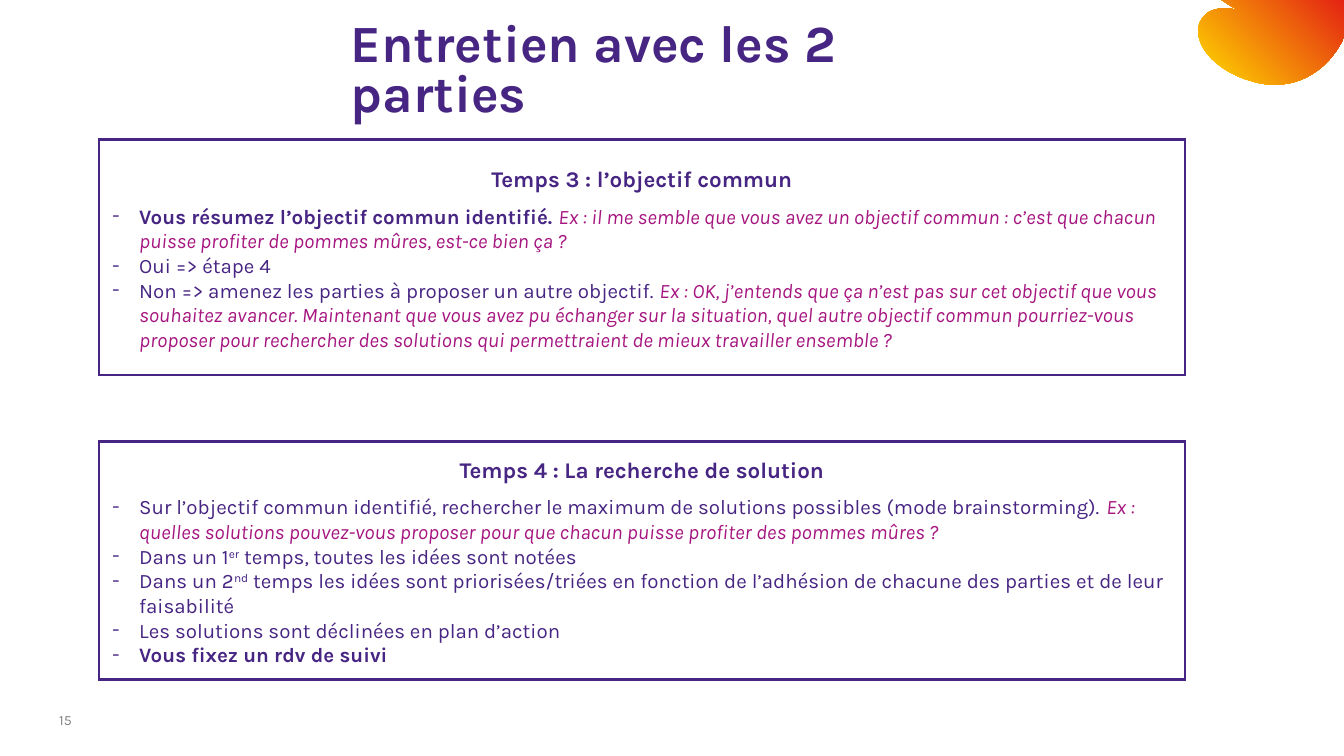
from dataclasses import dataclass
from typing import NamedTuple

from lxml import etree
from pptx import Presentation
from pptx import util as u
from pptx.dml.color import RGBColor
from pptx.enum import shapes, text
from pptx.oxml import ns

PURPLE = RGBColor(0x47, 0x25, 0x83)
PINK = RGBColor(0xA6, 0x16, 0x80)
GREY = RGBColor(0x80, 0x80, 0x80)
YELLOW = RGBColor(0xFF, 0xDD, 0x00)
RED = RGBColor(0xE4, 0x23, 0x12)

WIDE = u.Inches(10)
HIGH = WIDE * 9 // 16
CELL = WIDE / 100
LEFT, SPAN = 7.37, 80.8

FACE = "Karla"
BASE = {"name": FACE, "bold": False, "italic": False}
FORMS = {
    "title": {"size": u.Pt(28), "bold": True},
    "page": {"size": u.Pt(7.5)},
    "head": {"size": u.Pt(12), "bold": True},
    "body": {"size": u.Pt(11)},
    "bold": {"size": u.Pt(11), "bold": True},
    "quote": {"size": u.Pt(11), "italic": True},
    "super": {"size": u.Pt(11)},
}
INKS = {"quote": PINK, "page": GREY}
BARE = dict.fromkeys(
    ("margin_left", "margin_top", "margin_right", "margin_bottom"), 0
)


class Span(NamedTuple):
    words: str
    form: str = "body"


class Area(NamedTuple):
    left: float
    top: float
    width: float
    height: float

    def scale(self) -> list[int]:
        return [round(side * CELL) for side in self]


@dataclass(frozen=True)
class Panel:
    top: float
    height: float
    head: str
    items: list[list[Span]]


PANELS = [
    Panel(10.4, 17.5, "Temps 3 : l’objectif commun", [
        [
            Span("Vous résumez l’objectif commun identifié. ", "bold"),
            Span("Ex : il me semble que vous avez un objectif commun : "
                 "c’est que chacun puisse profiter de pommes mûres, "
                 "est-ce bien ça ?", "quote"),
        ],
        [Span("Oui => étape 4")],
        [
            Span("Non => amenez les parties à proposer un autre objectif. "),
            Span("Ex : OK, j’entends que ça n’est pas sur cet objectif que "
                 "vous souhaitez avancer. Maintenant que vous avez pu "
                 "échanger sur la situation, quel autre objectif commun "
                 "pourriez-vous proposer pour rechercher des solutions qui "
                 "permettraient de mieux travailler ensemble ?", "quote"),
        ],
    ]),
    Panel(32.85, 17.7, "Temps 4 : La recherche de solution", [
        [
            Span("Sur l’objectif commun identifié, rechercher le maximum de "
                 "solutions possibles (mode brainstorming). "),
            Span("Ex : quelles solutions pouvez-vous proposer pour que "
                 "chacun puisse profiter des pommes mûres ?", "quote"),
        ],
        [
            Span("Dans un 1"),
            Span("er", "super"),
            Span(" temps, toutes les idées sont notées"),
        ],
        [
            Span("Dans un 2"),
            Span("nd", "super"),
            Span(" temps les idées sont priorisées/triées en fonction de "
                 "l’adhésion de chacune des parties et de leur faisabilité"),
        ],
        [Span("Les solutions sont déclinées en plan d’action")],
        [Span("Vous fixez un rdv de suivi", "bold")],
    ]),
]

PETAL = [
    [(99.9, 3), (98.7, 5.4), (96.2, 6.9), (93.3, 6.1)],
    [(93.3, 6.1), (89.6, 5.1), (88.3, 2.3), (89.7, 1.1)],
    [(89.7, 1.1), (90.2, 0.6), (91.1, 0.5), (92.4, 0.8)],
    [(92.4, 0.8), (92.1, 0.7), (91.8, 0.6), (91.5, 0.4)],
]


def assign(target, values: dict) -> None:
    for key, value in values.items():
        setattr(target, key, value)


def write(para, spans: list[Span]) -> None:
    for span in spans:
        run = para.add_run()
        run.text = span.words
        assign(run.font, BASE | FORMS[span.form])
        run.font.color.rgb = INKS.get(span.form, PURPLE)
        if span.form == "super":
            run.font._element.set("baseline", "30000")


def dash(para) -> None:
    props = para._p.get_or_add_pPr()
    props.set("marL", str(u.Inches(0.2)))
    props.set("indent", str(-u.Inches(0.2)))
    etree.SubElement(props, ns.qn("a:buFont")).set("typeface", FACE)
    etree.SubElement(props, ns.qn("a:buChar")).set("char", "-")


def label(slide, area: Area, span: Span, anchor, gap: float) -> None:
    frame = slide.shapes.add_textbox(*area.scale()).text_frame
    assign(frame, BARE | {"word_wrap": True, "vertical_anchor": anchor})
    para = frame.paragraphs[0]
    para.line_spacing = gap
    write(para, [span])


def frame_panel(slide, panel: Panel) -> None:
    area = Area(LEFT, panel.top, SPAN, panel.height)
    box = slide.shapes.add_shape(shapes.MSO_SHAPE.RECTANGLE, *area.scale())
    box.shadow.inherit = False
    box.fill.background()
    box.line.color.rgb = PURPLE
    box.line.width = u.Pt(1.5)
    edge = box.line._get_or_add_ln()
    etree.SubElement(edge, ns.qn("a:miter")).set("lim", "800000")
    frame = box.text_frame
    assign(frame, {"word_wrap": True, "margin_top": u.Pt(4.8),
                   "vertical_anchor": text.MSO_ANCHOR.MIDDLE})
    head = frame.paragraphs[0]
    assign(head, {"alignment": text.PP_ALIGN.CENTER, "space_after": u.Pt(6)})
    write(head, [Span(panel.head, "head")])
    for item in panel.items:
        para = frame.add_paragraph()
        para.alignment = text.PP_ALIGN.LEFT
        dash(para)
        write(para, item)


def curve(knots: list[tuple], steps: int = 16) -> list[tuple]:
    points = []
    for step in range(steps + 1):
        t = step / steps
        s = 1 - t
        rates = (s**3, 3 * s * s * t, 3 * s * t * t, t**3)
        points.append(tuple(
            sum(rate * knot[axis] for rate, knot in zip(rates, knots))
            for axis in (0, 1)
        ))
    return points


def petal(slide) -> None:
    points = [(100, 0), (100, 2.6)]
    for knots in PETAL:
        points += curve(knots)
    pen = slide.shapes.build_freeform(round(90.9 * CELL), 0)
    pen.add_line_segments(
        [(round(x * CELL), round(y * CELL)) for x, y in points], close=True
    )
    shape = pen.convert_to_shape()
    shape.shadow.inherit = False
    shape.line.fill.background()
    shape.fill.gradient()
    shape.fill.gradient_angle = 45
    for stop, ink, place in zip(
        shape.fill.gradient_stops, (YELLOW, RED), (0, 1)
    ):
        stop.color.rgb = ink
        stop.position = place


def main() -> None:
    deck = Presentation()
    assign(deck, {"slide_width": WIDE, "slide_height": HIGH})
    slide = deck.slides.add_slide(deck.slide_layouts[6])
    petal(slide)
    label(slide, Area(26.1, 1.9, 47.7, 7),
          Span("Entretien avec les 2 parties", "title"),
          text.MSO_ANCHOR.MIDDLE, 0.8)
    label(slide, Area(4.4, 53.2, 5.9, 1), Span("15", "page"),
          text.MSO_ANCHOR.BOTTOM, 1.0)
    for panel in PANELS:
        frame_panel(slide, panel)
    deck.save("out.pptx")


if __name__ == "__main__":
    main()
